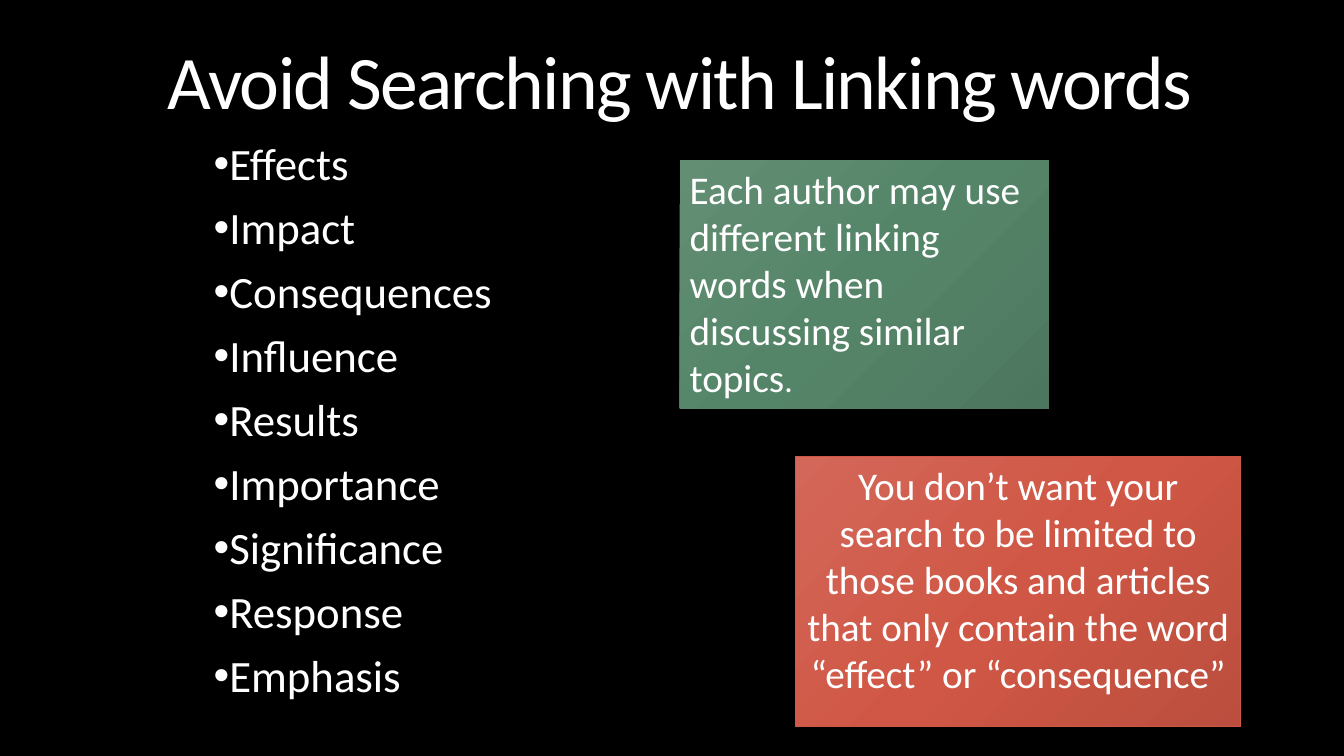
from lxml import etree
from pptx import Presentation
from pptx.dml.color import RGBColor
from pptx.enum import shapes, text
from pptx.oxml.ns import qn
from pptx.util import Pt

COLORS = {
    "background": "000000",
    "text": "FFFFFF",
    "red_line": "D05745",
}
GREEN = {0: "638E74", 50: "558569", 100: "4C775E"}
RED = {0: "D36759", 50: "D05745", 100: "BB4E3E"}
LINKING_WORDS = ["Effects", "Impact", "Consequences", "Influence", "Results",
                 "Importance", "Significance", "Response", "Emphasis"]


def rgb(name):
    return RGBColor.from_string(COLORS[name])


def place(sp, left, top, width, height):
    sp.left, sp.top, sp.width, sp.height = map(Pt, (left, top, width, height))


def add_text(p, content, size=28, align=text.PP_ALIGN.LEFT,
             line_spacing=None, before=None, tracking=None):
    p.alignment = align
    if line_spacing:
        p.line_spacing = line_spacing
    if before:
        p.space_before = Pt(before)
    r = p.add_run()
    r.text = content
    r.font.name = "Calibri"
    r.font.size = Pt(size)
    r.font.color.rgb = rgb("text")
    if tracking:
        r.font._element.set("spc", str(round(tracking * 100)))


def set_bullet(p, indent):
    pPr = p._p.get_or_add_pPr()
    pPr.set("marL", str(Pt(indent)))
    pPr.set("indent", str(-Pt(indent)))
    etree.SubElement(pPr, qn("a:buFont")).set("typeface", "Arial")
    etree.SubElement(pPr, qn("a:buChar")).set("char", "•")


def set_gradient(sp, stops):
    sp.fill.gradient()
    sp.fill.gradient_angle = 315
    gs_list = sp._element.spPr.find(qn("a:gradFill")).find(qn("a:gsLst"))
    for gs in list(gs_list):
        gs_list.remove(gs)
    for percent, color in stops.items():
        gs = etree.SubElement(gs_list, qn("a:gs"), pos=str(percent * 1000))
        etree.SubElement(gs, qn("a:srgbClr"), val=color)


def add_title(s, content):
    sp = s.shapes.title
    place(sp, 85, 23, 801, 78)
    tf = sp.text_frame
    tf.auto_size = text.MSO_AUTO_SIZE.NONE
    tf.vertical_anchor = text.MSO_ANCHOR.MIDDLE
    add_text(tf.paragraphs[0], content, size=54, line_spacing=0.85,
             align=text.PP_ALIGN.CENTER, tracking=-1.2)


def add_bullets(s, items):
    sp = s.shapes.add_textbox(Pt(145.5), Pt(99.5), Pt(511), Pt(387))
    tf = sp.text_frame
    tf.word_wrap = True
    for i, item in enumerate(items):
        p = tf.add_paragraph() if i else tf.paragraphs[0]
        add_text(p, item, size=32, line_spacing=0.85, before=13)
        set_bullet(p, 7.2)


def add_callout(s, box, stops, line=None):
    sp = s.shapes.add_shape(shapes.MSO_SHAPE.RECTANGLE, *map(Pt, box))
    sp.shadow.inherit = False
    set_gradient(sp, stops)
    if line:
        sp.line.color.rgb = rgb(line)
        sp.line.width = Pt(0.75)
    else:
        sp.line.fill.background()
    tf = sp.text_frame
    tf.word_wrap = True
    tf.vertical_anchor = text.MSO_ANCHOR.TOP
    return tf.paragraphs[0]


def main():
    prs = Presentation()
    prs.slide_width, prs.slide_height = Pt(960), Pt(540)
    s = prs.slides.add_slide(prs.slide_layouts[5])
    s.background.fill.solid()
    s.background.fill.fore_color.rgb = rgb("background")

    add_title(s, "Avoid Searching with Linking words")
    add_bullets(s, LINKING_WORDS)

    p = add_callout(s, (485.5, 114.5, 263.5, 177), GREEN)
    add_text(p, "Each author may use different linking words when "
                "discussing similar topics")
    add_text(p, ".", size=24)

    p = add_callout(s, (568.5, 326, 317.5, 193), RED, line="red_line")
    add_text(p, "You don’t want your search to be limited to those books and "
                "articles that only contain the word “effect” or “consequence”",
             align=text.PP_ALIGN.CENTER)

    prs.save("out.pptx")


if __name__ == "__main__":
    main()
